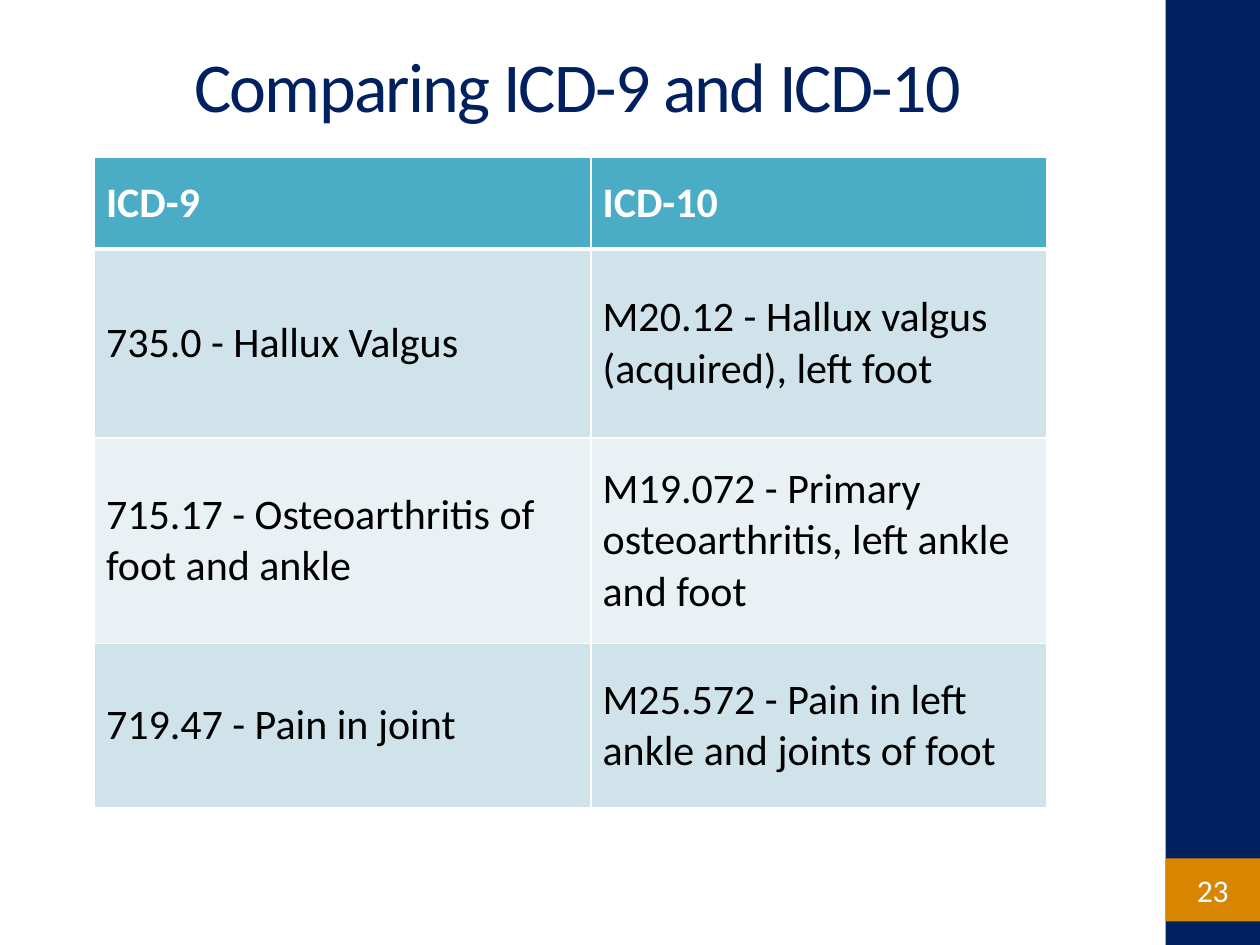
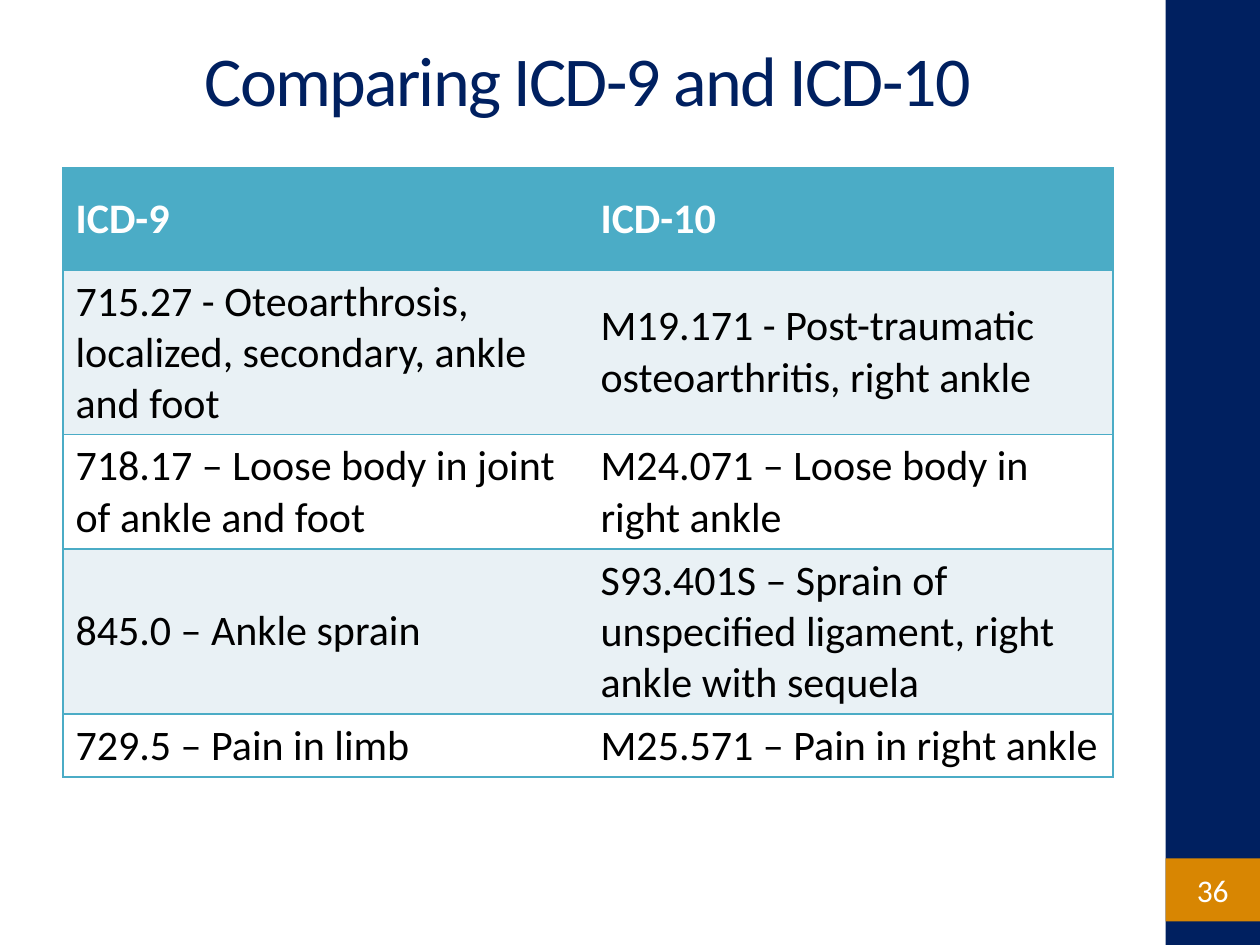
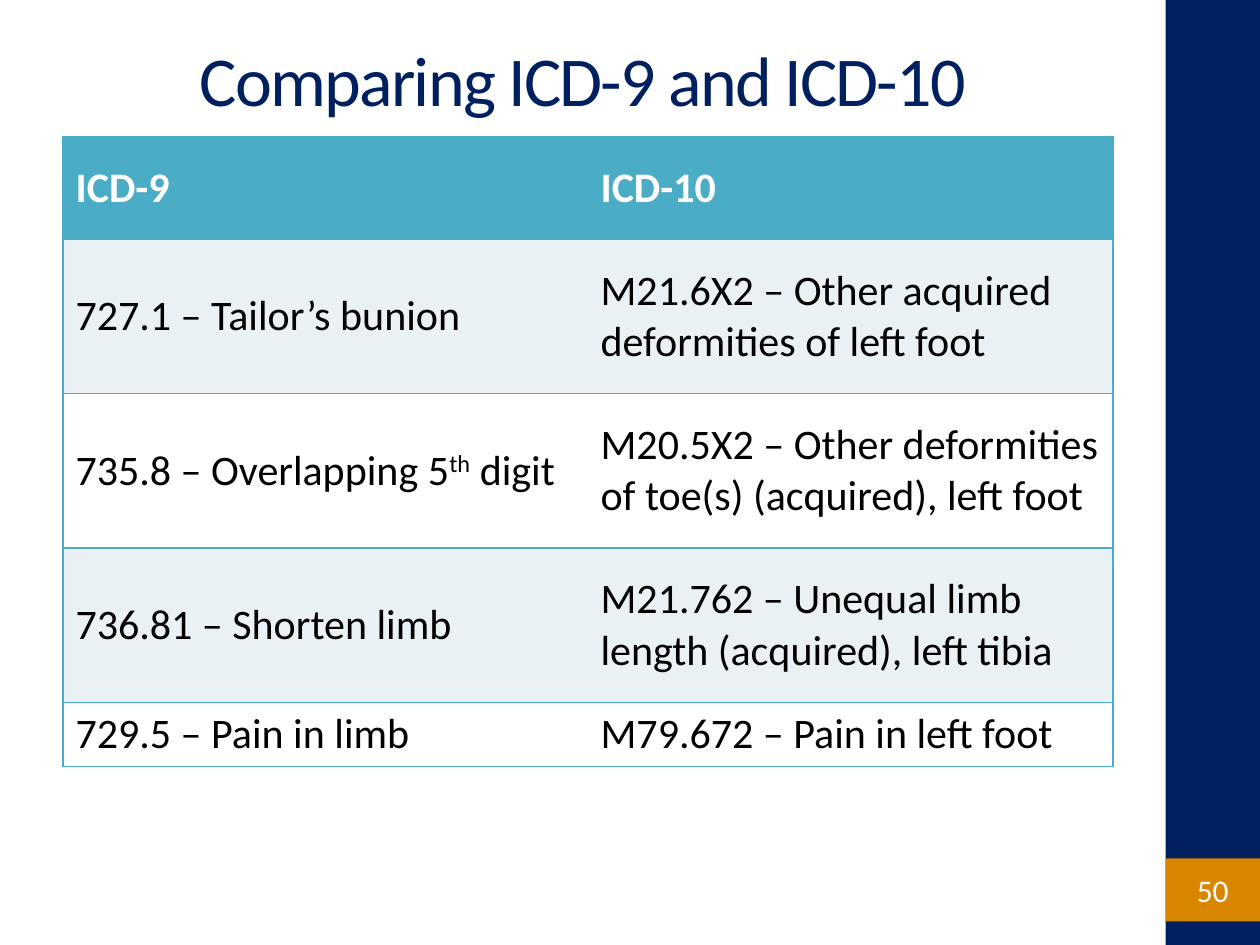
from lxml.etree import SubElement
from pptx import Presentation
from pptx.dml.color import RGBColor
from pptx.enum.shapes import MSO_SHAPE
from pptx.enum.text import MSO_ANCHOR, PP_ALIGN
from pptx.oxml.ns import qn
from pptx.util import Inches, Pt

COLORS = {"navy": "002060", "orange": "D88602", "teal": "4BACC6", "mist": "D0E3EA",
          "pale": "E9F1F5", "white": "FFFFFF", "black": "000000"}
COLUMNS, ROWS = 120, 90
HEADINGS = ("ICD-9", "ICD-10")

SLIDES = [
    dict(number=23, title_area=(5, 3, 100, 10), corner=(9, 15), look="filled",
         widths=(47.3, 43.4), heights=(8.7, 18, 19.6, 15.6), codes=[
             ("735.0 - Hallux Valgus", "M20.12 - Hallux valgus (acquired), left foot"),
             ("715.17 - Osteoarthritis of foot and ankle",
              "M19.072 - Primary osteoarthritis, left ankle and foot"),
             ("719.47 - Pain in joint", "M25.572 - Pain in left ankle and joints of foot")]),
    dict(number=36, title_area=(6, 0, 100, 15), corner=(6, 16), look="outlined",
         widths=(50, 50), heights=(9.7, 15.7, 10.9, 15.7, 6), codes=[
             ("715.27 - Oteoarthrosis, localized, secondary, ankle and foot",
              "M19.171 - Post-traumatic osteoarthritis, right ankle"),
             ("718.17 – Loose body in joint of ankle and foot",
              "M24.071 – Loose body in right ankle"),
             ("845.0 – Ankle sprain",
              "S93.401S – Sprain of unspecified ligament, right ankle with sequela"),
             ("729.5 – Pain in limb", "M25.571 – Pain in right ankle")]),
    dict(number=50, title_area=(6, 2, 99, 11), corner=(6, 13), look="outlined",
         widths=(50, 50), heights=(9.8, 14.7, 14.7, 14.7, 6.1), codes=[
             ("727.1 – Tailor’s bunion", "M21.6X2 – Other acquired deformities of left foot"),
             ("735.8 – Overlapping 5^th^ digit",
              "M20.5X2 – Other deformities of toe(s) (acquired), left foot"),
             ("736.81 – Shorten limb", "M21.762 – Unequal limb length (acquired), left tibia"),
             ("729.5 – Pain in limb", "M79.672 – Pain in left foot")]),
]


class CodeDeck:
    """Builds the code comparison slides on a grid of 120 columns by 90 rows."""

    bands = {"filled": ("mist", "pale"), "outlined": ("pale", "white")}
    insets = {"filled": 1.1, "outlined": 1.2}

    def __init__(self):
        self.deck = Presentation()
        self.deck.slide_width, self.deck.slide_height = Inches(10), Inches(7.5)
        self.page = None

    def across(self, columns):
        return round(self.deck.slide_width * columns / COLUMNS)

    def down(self, rows):
        return round(self.deck.slide_height * rows / ROWS)

    def place(self, left, top, width, height):
        return self.across(left), self.down(top), self.across(width), self.down(height)

    def paint(self, fill, color):
        fill.solid()
        fill.fore_color.rgb = RGBColor.from_string(COLORS[color])

    def add_text(self, frame, text, size, color, align=PP_ALIGN.LEFT, bold=False):
        frame.word_wrap = True
        para = frame.paragraphs[0]
        para.alignment = align
        for index, part in enumerate(text.split("^")):
            span = para.add_run()
            span.text = part
            if index % 2:
                span._r.get_or_add_rPr().set("baseline", "30000")
        para.font.name, para.font.size, para.font.bold = "Calibri", Pt(size), bold
        para.font.color.rgb = RGBColor.from_string(COLORS[color])
        return para

    def add_page(self, number):
        self.page = self.deck.slides.add_slide(self.deck.slide_layouts[6])
        self.add_band(0, ROWS, "navy")
        badge = self.add_band(81.75, 6, "orange").text_frame
        badge.vertical_anchor = MSO_ANCHOR.MIDDLE
        self.add_text(badge, str(number), 18, "white", PP_ALIGN.CENTER)

    def add_band(self, top, height, color):
        band = self.page.shapes.add_shape(MSO_SHAPE.RECTANGLE, *self.place(111, top, 9, height))
        band.shadow.inherit = False
        band.line.fill.background()
        self.paint(band.fill, color)
        return band

    def add_title(self, text, area):
        frame = self.page.shapes.add_textbox(*self.place(*area)).text_frame
        frame.vertical_anchor = MSO_ANCHOR.MIDDLE
        para = self.add_text(frame, text, 40, "navy", PP_ALIGN.CENTER)
        for span in para.runs:
            span._r.get_or_add_rPr().set("spc", "-100")

    def add_border(self, cell, side, color, points=1):
        line = SubElement(cell._tc.get_or_add_tcPr(), qn(f"a:ln{side}"), w=str(Pt(points)))
        if color:
            fill = SubElement(line, qn("a:solidFill"))
            SubElement(fill, qn("a:srgbClr"), val=COLORS[color])
        else:
            SubElement(line, qn("a:noFill"))

    def add_borders(self, cell, look, row, column):
        if look == "filled":
            for side in "LRTB":
                thick = (row, side) in ((0, "B"), (1, "T"))
                self.add_border(cell, side, "white", 3 if thick else 1)
        else:
            inner = "R" if column == 0 else "L"
            for side in "LRTB":
                self.add_border(cell, side, None if side == inner else "teal")

    def add_table(self, codes, corner, widths, heights, look):
        lines = [HEADINGS, *codes]
        area = self.place(*corner, sum(widths), sum(heights))
        table = self.page.shapes.add_table(len(lines), len(widths), *area).table
        for column, width in zip(table.columns, widths):
            column.width = self.across(width)
        for row, height in zip(table.rows, heights):
            row.height = self.down(height)
        for row, texts in enumerate(lines):
            header = row == 0
            color = "teal" if header else self.bands[look][(row - 1) % 2]
            for column, text in enumerate(texts):
                cell = table.cell(row, column)
                cell.vertical_anchor = MSO_ANCHOR.MIDDLE
                cell.margin_left = cell.margin_right = self.across(self.insets[look])
                self.add_borders(cell, look, row, column)
                self.paint(cell.fill, color)
                self.add_text(cell.text_frame, text, 24, "white" if header else "black",
                              bold=header)


def main():
    builder = CodeDeck()
    for slide in SLIDES:
        builder.add_page(slide["number"])
        builder.add_title("Comparing ICD-9 and ICD-10", slide["title_area"])
        builder.add_table(slide["codes"], slide["corner"], slide["widths"],
                          slide["heights"], slide["look"])
    builder.deck.save("out.pptx")


if __name__ == "__main__":
    main()
